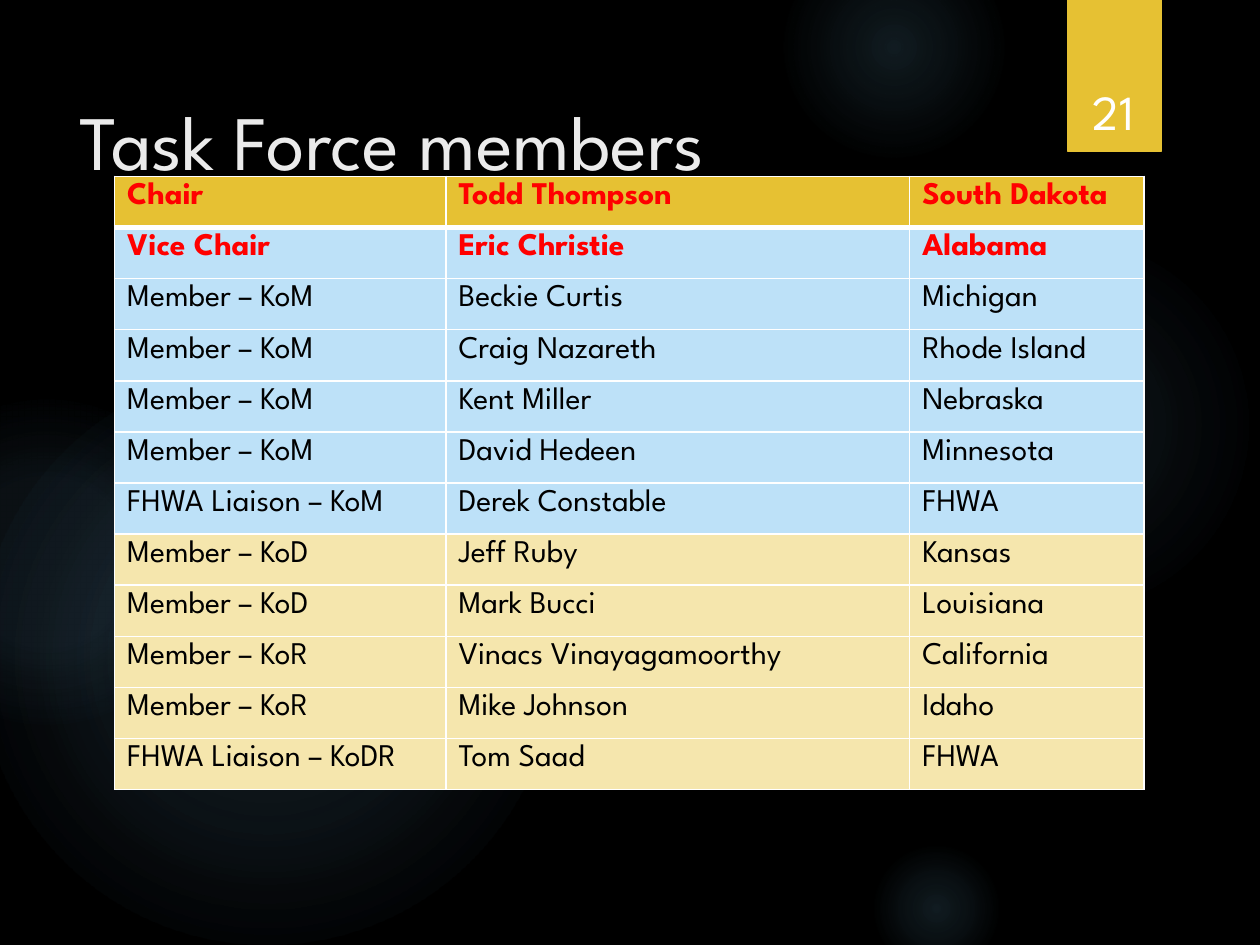
from pptx import Presentation
from pptx.dml.color import RGBColor
from pptx.enum.shapes import MSO_SHAPE
from pptx.enum.text import MSO_ANCHOR, PP_ALIGN
from pptx.oxml import parse_xml
from pptx.oxml.ns import nsdecls
from pptx.util import Inches, Pt

BLACK = RGBColor(0x00, 0x00, 0x00)
WHITE = RGBColor(0xFF, 0xFF, 0xFF)
OFF_WHITE = RGBColor(0xEB, 0xEB, 0xEB)
RED = RGBColor(0xFF, 0x00, 0x00)
GOLD = RGBColor(0xE6, 0xC1, 0x33)
PALE_GOLD = RGBColor(0xF5, 0xE6, 0xAD)
PALE_BLUE = RGBColor(0xBD, 0xE1, 0xF8)
GLOW_BLUE = RGBColor(0x7A, 0xC4, 0xF0)
FONT = "League Spartan"

# left, top, diameter, then (position %, opacity %) of each gradient stop
GLOWS = [
    (6.89, 1.83, 3.08, [(0, 7), (36, 6), (69, 0)]),
    (6.22, -0.5, 1.75, [(0, 14), (36, 7), (73, 0)]),
    (6.89, 6.67, 1.08, [(0, 14), (36, 7), (66, 0)]),
    (-0.17, 2.92, 4.58, [(0, 11), (36, 10), (75, 0)]),
    (-0.92, 3.17, 2.58, [(0, 8), (36, 8), (72, 0)]),
]
MEMBERS = [
    ("Chair", "Todd Thompson", "South Dakota"),
    ("Vice Chair", "Eric Christie", "Alabama"),
    ("Member – KoM", "Beckie Curtis", "Michigan"),
    ("Member – KoM", "Craig Nazareth", "Rhode Island"),
    ("Member – KoM", "Kent Miller", "Nebraska"),
    ("Member – KoM", "David Hedeen", "Minnesota"),
    ("FHWA Liaison – KoM", "Derek Constable", "FHWA"),
    ("Member – KoD", "Jeff Ruby", "Kansas"),
    ("Member – KoD", "Mark Bucci", "Louisiana"),
    ("Member – KoR", "Vinacs Vinayagamoorthy", "California"),
    ("Member – KoR", "Mike Johnson", "Idaho"),
    ("FHWA Liaison – KoDR", "Tom Saad", "FHWA"),
]
ROW_FILLS = [GOLD] + [PALE_BLUE] * 6 + [PALE_GOLD] * 5
COLUMN_WIDTHS = [2.63, 3.68, 1.86]


def write(frame, text, size, color, bold=False, align=PP_ALIGN.LEFT):
    para = frame.paragraphs[0]
    para.alignment = align
    span = para.add_run()
    span.text = text
    for name, value in {"name": FONT, "size": Pt(size), "bold": bold}.items():
        setattr(span.font, name, value)
    span.font.color.rgb = color


def add_border(cell, side, points):
    cell._tc.get_or_add_tcPr().append(parse_xml(
        f'<a:ln{side} {nsdecls("a")} w="{Pt(points)}"><a:solidFill>'
        f'<a:srgbClr val="{WHITE}"/></a:solidFill></a:ln{side}>'))


deck = Presentation()
deck.slide_width, deck.slide_height = Inches(10), Inches(7.5)
page = deck.slides.add_slide(deck.slide_layouts[5])
page.background.fill.solid()
page.background.fill.fore_color.rgb = BLACK

# Soft background glows
for left, top, diameter, stops in GLOWS:
    glow = page.shapes.add_shape(MSO_SHAPE.OVAL, Inches(left), Inches(top),
                                 Inches(diameter), Inches(diameter))
    glow.shadow.inherit = False
    glow.line.fill.background()
    stop_xml = "".join(
        f'<a:gs pos="{position * 1000}"><a:srgbClr val="{GLOW_BLUE}">'
        f'<a:alpha val="{opacity * 1000}"/></a:srgbClr></a:gs>'
        for position, opacity in stops)
    glow._element.spPr.insert(2, parse_xml(
        f'<a:gradFill {nsdecls("a")}><a:gsLst>{stop_xml}</a:gsLst><a:path path="circle">'
        '<a:fillToRect l="50000" t="50000" r="50000" b="50000"/></a:path></a:gradFill>'))

# Page number tab
tab = page.shapes.add_shape(MSO_SHAPE.RECTANGLE, Inches(8.47), 0, Inches(0.75), Inches(1.2))
tab.fill.solid()
tab.fill.fore_color.rgb = GOLD
tab.line.color.rgb = GOLD
tab.line.width = Pt(0.75)
tab._element.spPr.append(parse_xml(
    f'<a:effectLst {nsdecls("a")}><a:outerShdw blurRad="{Pt(3)}" dist="{Pt(2)}" dir="5400000">'
    f'<a:srgbClr val="{BLACK}"><a:alpha val="45000"/></a:srgbClr></a:outerShdw></a:effectLst>'))

# Title
title = page.shapes.title
title.left, title.top, title.width, title.height = map(Inches, (0.53, 0.5, 8.08, 1.53))
title.text_frame.vertical_anchor = MSO_ANCHOR.TOP
title.text_frame.margin_top = Inches(0.24)
write(title.text_frame, "Task Force members", 44, OFF_WHITE)

# Member table
table = page.shapes.add_table(len(MEMBERS), len(COLUMN_WIDTHS), Inches(0.91), Inches(1.4),
                              Inches(8.17), Inches(4.87)).table
for column, width in zip(table.columns, COLUMN_WIDTHS):
    column.width = Inches(width)
for row, (member, fill) in enumerate(zip(MEMBERS, ROW_FILLS)):
    officer = row < 2
    for column, text in enumerate(member):
        cell = table.cell(row, column)
        write(cell.text_frame, text, 18, RED if officer else BLACK, officer)
        for side in "LRTB":
            add_border(cell, side, 3 if (row, side) in [(0, "B"), (1, "T")] else 1)
        cell.fill.solid()
        cell.fill.fore_color.rgb = fill

# Page number
number = page.shapes.add_textbox(Inches(8.49), Inches(0.32), Inches(0.69), Inches(0.84))
number.text_frame.word_wrap = True
number.text_frame.vertical_anchor = MSO_ANCHOR.BOTTOM
write(number.text_frame, "21", 28, WHITE, align=PP_ALIGN.CENTER)

deck.save("out.pptx")
